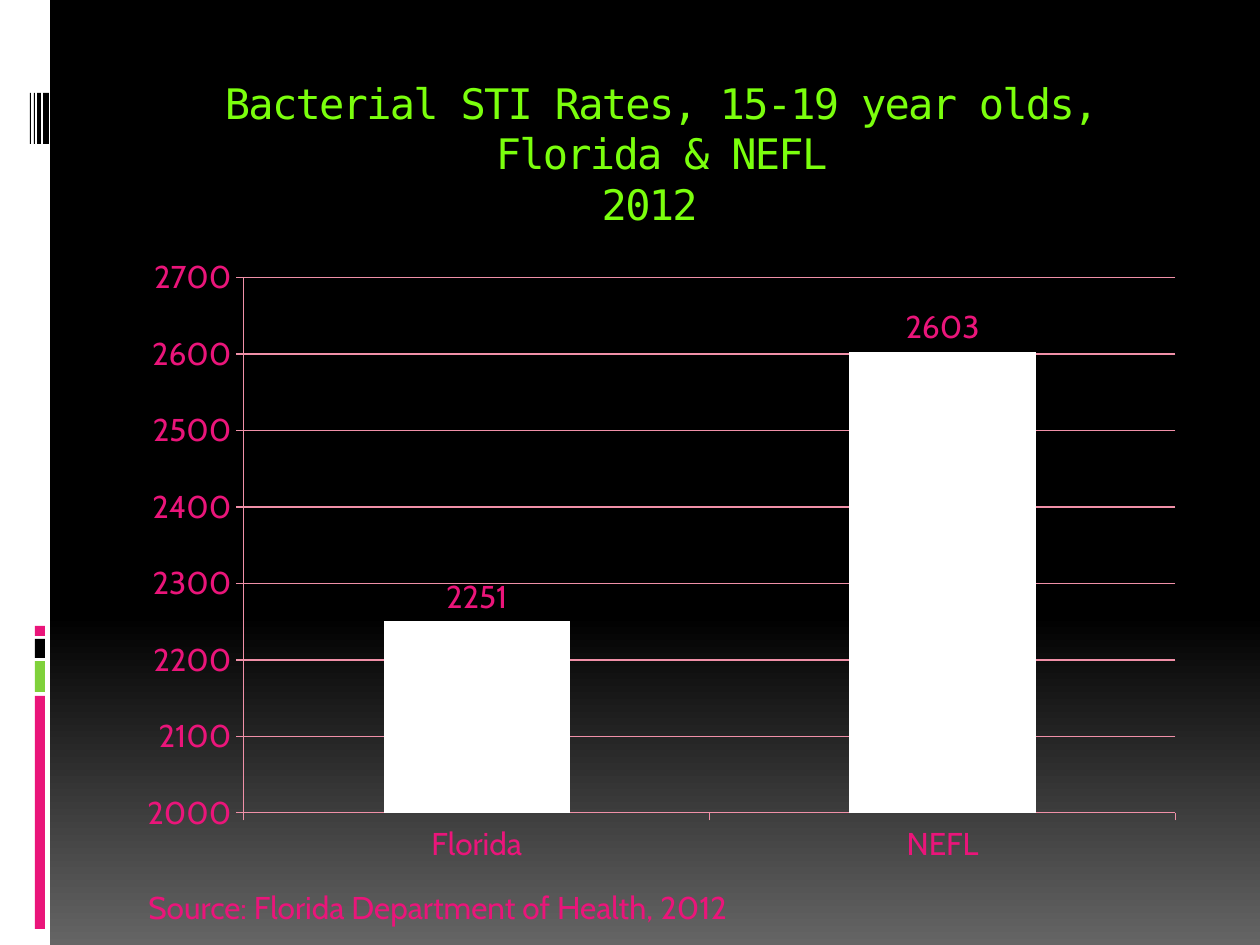
from lxml import etree
from pptx import Presentation
from pptx import util as u
from pptx.chart.data import CategoryChartData
from pptx.dml.color import RGBColor
from pptx.enum import chart as ch, shapes, text
from pptx.oxml import ns

WHITE = RGBColor(0xFF, 0xFF, 0xFF)
BLACK = RGBColor(0, 0, 0)
GRAY = RGBColor(0x65, 0x65, 0x65)
PINK = RGBColor(0xEA, 0x15, 0x7A)
PALE_PINK = RGBColor(0xF0, 0x90, 0xA8)
GREEN = RGBColor(0x7F, 0xD1, 0x3B)
LIME = RGBColor(0x7B, 0xFF, 0x0D)
BODY_FONT = "Cabin"
TITLE_FONT = "DejaVu Sans Mono"

HEADING = "Bacterial STI Rates, 15-19 year olds,\vFlorida & NEFL\v2012 "
SOURCE = "Source: Florida Department of Health, 2012"
RATES = {"Florida": 2251, "NEFL": 2603}
STACK = [(626, 10, PINK), (639, 19, BLACK), (661, 31, GREEN), (696, 233, PINK)]
BARCODE = [(30, 1), (34, 1), (37, 4), (43, 6)]
PLOT_AREA = {"x": 0.11, "y": 0.05, "w": 0.87, "h": 0.85}


def px(n):
    return u.Emu(round(n * 914400 / 126))


def box(*edges):
    return [px(n) for n in edges]


def style(font, size=18, name=BODY_FONT, color=PINK):
    font.size, font.name, font.bold = u.Pt(size), name, False
    font.color.rgb = color


def write(frame, words, align=text.PP_ALIGN.LEFT, spacing=0, **look):
    frame.word_wrap = True
    frame.vertical_anchor = text.MSO_ANCHOR.TOP
    paragraph = frame.paragraphs[0]
    paragraph.text = words
    paragraph.alignment = align
    for run in paragraph.runs:
        style(run.font, **look)
        if spacing:
            run.font._element.set("spc", str(spacing))


def add_block(slide, left, top, width, height, color):
    block = slide.shapes.add_shape(
        shapes.MSO_SHAPE.RECTANGLE, *box(left, top, width, height))
    block.shadow.inherit = False
    block.fill.solid()
    block.fill.fore_color.rgb = color
    block.line.fill.background()


def paint_background(slide):
    fill = slide.background.fill
    fill.gradient()
    fill.gradient_angle = 270
    for stop, position, color in zip(fill.gradient_stops, (0.65, 1), (BLACK, GRAY)):
        stop.position = position
        stop.color.rgb = color


def fix_plot_area(chart):
    plot_area = chart._chartSpace.chart.plotArea
    for old in plot_area.findall(ns.qn("c:layout")):
        plot_area.remove(old)
    layout = etree.Element(ns.qn("c:layout"))
    manual = etree.SubElement(layout, ns.qn("c:manualLayout"))
    settings = {"layoutTarget": "inner", "xMode": "edge", "yMode": "edge", **PLOT_AREA}
    for tag, value in settings.items():
        etree.SubElement(manual, ns.qn("c:" + tag)).set("val", str(value))
    plot_area.insert(0, layout)


def add_rates_chart(slide):
    data = CategoryChartData()
    data.categories = list(RATES)
    data.add_series("Series 1", list(RATES.values()))
    chart = slide.shapes.add_chart(
        ch.XL_CHART_TYPE.COLUMN_CLUSTERED, *box(126, 246, 1071, 630), data).chart
    chart.has_legend = chart.has_title = False
    style(chart.font)

    values = chart.value_axis
    values.minimum_scale, values.maximum_scale, values.major_unit = 2000, 2700, 100
    values.has_major_gridlines = True
    for axis in (chart.category_axis, values):
        axis.major_tick_mark = ch.XL_TICK_MARK.OUTSIDE
    for line in (chart.category_axis.format.line, values.format.line,
                 values.major_gridlines.format.line):
        line.color.rgb = PALE_PINK
        line.width = u.Pt(0.75)

    plot = chart.plots[0]
    plot.gap_width = 150
    plot.vary_by_categories = False
    bars = plot.series[0]
    bars.format.fill.solid()
    bars.format.fill.fore_color.rgb = WHITE
    labels = bars.data_labels
    labels.show_value = True
    labels.position = ch.XL_LABEL_POSITION.OUTSIDE_END
    style(labels.font)
    fix_plot_area(chart)


def main():
    deck = Presentation()
    deck.slide_width, deck.slide_height = px(1260), px(945)
    slide = deck.slides.add_slide(deck.slide_layouts[5])
    paint_background(slide)

    add_block(slide, 0, 0, 50, 945, WHITE)
    for top, height, color in STACK:
        add_block(slide, 35, top, 10, height, color)
    for left, width in BARCODE:
        add_block(slide, left, 93, width, 51, BLACK)

    title = slide.shapes.title
    title.left, title.top, title.width, title.height = box(126, 71, 1071, 126)
    write(title.text_frame, HEADING, align=text.PP_ALIGN.CENTER, spacing=-100,
          size=24, name=TITLE_FONT, color=LIME)
    title.text_frame.auto_size = text.MSO_AUTO_SIZE.NONE

    add_rates_chart(slide)
    source = slide.shapes.add_textbox(*box(136, 882, 998, 51))
    write(source.text_frame, SOURCE)
    deck.save("out.pptx")


if __name__ == "__main__":
    main()
